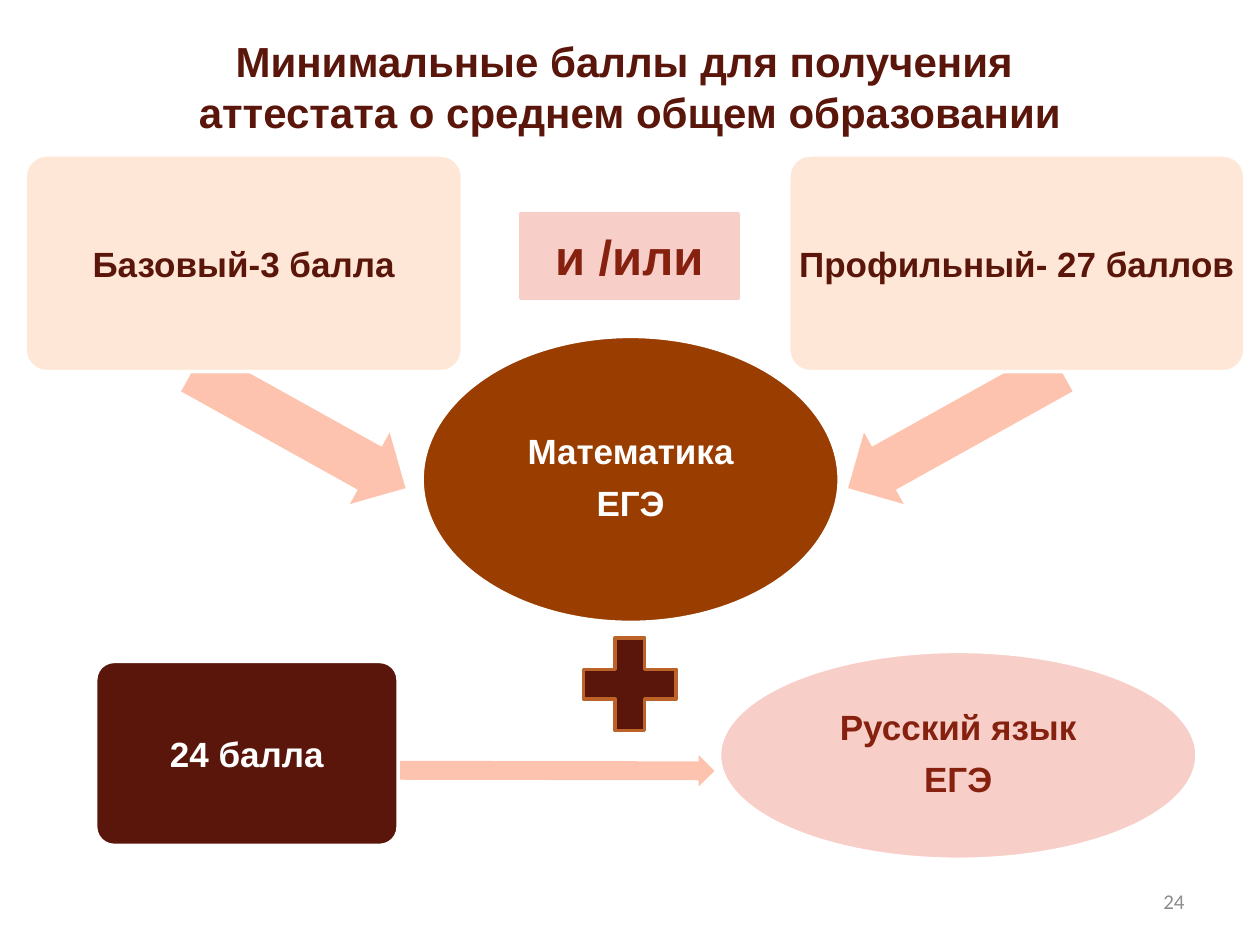
import pptx
import pptx.dml.color
import pptx.enum.shapes
import pptx.enum.text
import pptx.util
from dataclasses import dataclass
from typing import Optional

Inches = pptx.util.Inches
Pt = pptx.util.Pt
RGBColor = pptx.dml.color.RGBColor
Shape = pptx.enum.shapes.MSO_SHAPE
Align = pptx.enum.text.PP_ALIGN
Anchor = pptx.enum.text.MSO_ANCHOR

MAROON = RGBColor(0x5A, 0x16, 0x0B)
BRICK = RGBColor(0x86, 0x21, 0x10)
BROWN = RGBColor(0x9A, 0x3D, 0x01)
ORANGE = RGBColor(0xBC, 0x63, 0x29)
SALMON = RGBColor(0xFE, 0xC3, 0xAE)
PINK = RGBColor(0xF8, 0xCF, 0xC8)
PEACH = RGBColor(0xFF, 0xE7, 0xD7)
GRAY = RGBColor(0x8C, 0x8C, 0x8C)
WHITE = RGBColor(0xFF, 0xFF, 0xFF)


@dataclass
class Block:
    kind: int
    place: tuple[float, float, float, float]
    fill: RGBColor
    line: Optional[RGBColor] = WHITE
    lines: tuple[str, ...] = ()
    color: RGBColor = WHITE
    size: float = 20
    inset: float = 0.04
    spacing: float = 1.0
    adjustments: tuple[float, ...] = ()
    rotation: float = 0


def write(frame, lines: tuple[str, ...], size: float, color: RGBColor,
          bold: bool = True, align=Align.CENTER, font: str = "Arial",
          spacing: float = 1.0) -> None:
    frame.vertical_anchor = Anchor.MIDDLE
    for index, text in enumerate(lines):
        para = frame.paragraphs[0] if index == 0 else frame.add_paragraph()
        para.alignment = align
        para.line_spacing = spacing
        if index < len(lines) - 1:
            para.space_after = Pt(8)
        # A line break inside a paragraph separates its runs
        for number, part in enumerate(text.split("\n")):
            if number:
                para.add_line_break()
            span = para.add_run()
            span.text = part
            span.font.name = font
            span.font.size = Pt(size)
            span.font.bold = bold
            span.font.color.rgb = color


def draw_block(page, block: Block) -> None:
    box = page.shapes.add_shape(block.kind, *map(Inches, block.place))
    box.shadow.inherit = False
    box.rotation = block.rotation
    for index, value in enumerate(block.adjustments):
        box.adjustments[index] = value
    box.fill.solid()
    box.fill.fore_color.rgb = block.fill
    if block.line is None:
        box.line.fill.background()
    else:
        box.line.color.rgb = block.line
        box.line.width = Pt(2)
    if block.lines:
        frame = box.text_frame
        frame.word_wrap = False
        frame.margin_left = frame.margin_right = Inches(block.inset)
        frame.margin_top = frame.margin_bottom = Inches(block.inset)
        write(frame, block.lines, block.size, block.color, spacing=block.spacing)


def subject(place, fill: RGBColor, color: RGBColor, name: str) -> Block:
    return Block(Shape.OVAL, place, fill, lines=(name, "ЕГЭ"), color=color,
                 inset=0.01, spacing=0.9)


def score(place, fill: RGBColor, color: RGBColor, text: str) -> Block:
    return Block(Shape.ROUNDED_RECTANGLE, place, fill, lines=(text,),
                 color=color, adjustments=(0.1,))


def arrow(place, rotation: float) -> Block:
    return Block(Shape.LEFT_ARROW, place, SALMON, line=None,
                 adjustments=(0.6, 0.5), rotation=rotation)


BLOCKS = [
    # Mathematics with its two levels
    subject((3.35, 2.67, 3.31, 2.27), BROWN, WHITE, "Математика"),
    arrow((1.41, 3.08, 1.93, 0.65), 209.1),
    score((0.2, 1.23, 3.47, 1.72), PEACH, MAROON, "Базовый-3 балла"),
    arrow((6.61, 3.08, 1.93, 0.65), 330.9),
    score((6.26, 1.23, 3.62, 1.72), PEACH, MAROON, "Профильный- 27 баллов"),
    # Russian language
    subject((5.71, 5.17, 3.79, 1.65), PINK, BRICK, "Русский язык"),
    arrow((2.13, 5.99, 3.54, 0.25), 180.1),
    score((0.76, 5.25, 2.4, 1.46), MAROON, WHITE, "24 балла"),
    # Joining signs
    Block(Shape.FLOWCHART_PROCESS, (4.13, 1.7, 1.73, 0.67), PINK, line=PINK,
          lines=("и /или",), color=BRICK, size=28),
    Block(Shape.MATH_PLUS, (4.5, 4.93, 1, 1), MAROON, line=ORANGE),
]


def main() -> None:
    deck = pptx.Presentation()
    deck.slide_width, deck.slide_height = Inches(10), Inches(7.5)
    page = deck.slides.add_slide(deck.slide_layouts[5])

    # Title
    title = page.shapes.title
    title.left, title.top = Inches(0.5), Inches(0.3)
    title.width, title.height = Inches(9), Inches(0.77)
    write(title.text_frame,
          ("Минимальные баллы для получения \nаттестата о среднем общем образовании",),
          24, MAROON)

    # Diagram
    for block in BLOCKS:
        draw_block(page, block)

    # Page number
    number = page.shapes.add_textbox(Inches(7.17), Inches(6.95), Inches(2.33), Inches(0.4))
    number.text_frame.word_wrap = True
    write(number.text_frame, ("24",), 12, GRAY, bold=False,
          align=Align.RIGHT, font="Calibri")

    deck.save("out.pptx")


if __name__ == "__main__":
    main()
